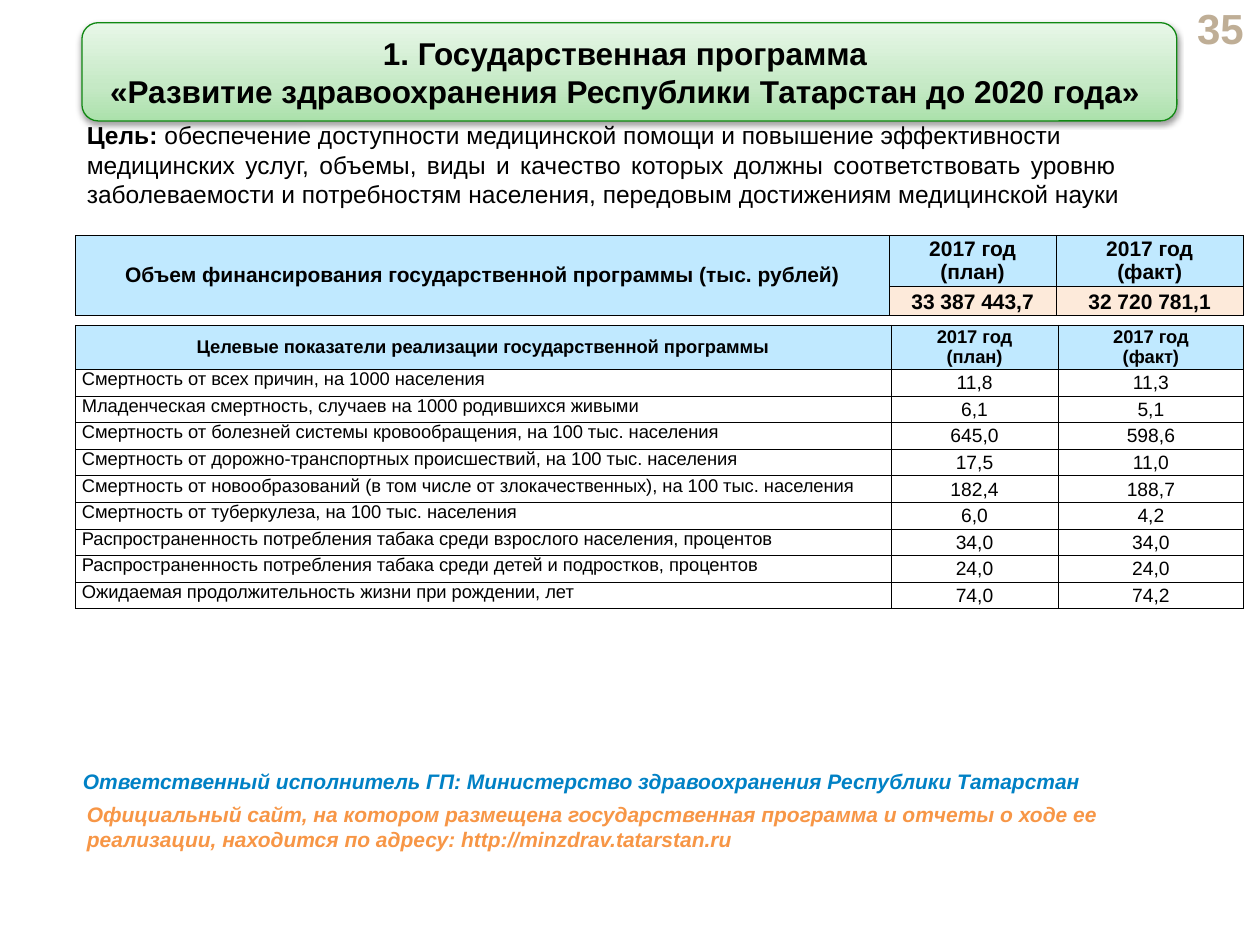
import copy

import pptx
import pptx.util
import pptx.dml.color
import pptx.enum.shapes
import pptx.enum.text
import pptx.oxml
import pptx.oxml.ns
from pptx.util import Inches

COLORS = {
    "text": "000000",
    "number": "BFAE96",
    "header": "C0E9FF",
    "amount": "FDEADA",
    "white": "FFFFFF",
    "title_line": "108812",
    "owner": "0081C5",
    "site": "F79646",
}
TITLE_STOPS = [(0, "ABE1AB"), (0.35, "C5E9C5"), (1, "E8F7E8")]
ALIGN = pptx.enum.text.PP_ALIGN
ANCHOR = pptx.enum.text.MSO_ANCHOR

YEARS = ["2017 год\n(план)", "2017 год\n(факт)"]
AMOUNTS = ["33 387 443,7", "32 720 781,1"]
INDICATORS = [
    ("Смертность от всех причин, на 1000 населения", "11,8", "11,3"),
    ("Младенческая смертность, случаев на 1000 родившихся живыми", "6,1", "5,1"),
    ("Смертность от болезней системы кровообращения, на 100 тыс. населения", "645,0", "598,6"),
    ("Смертность от дорожно-транспортных происшествий, на 100 тыс. населения", "17,5", "11,0"),
    ("Смертность от новообразований (в том числе от злокачественных), на 100 тыс. населения",
     "182,4", "188,7"),
    ("Смертность от туберкулеза, на 100 тыс. населения", "6,0", "4,2"),
    ("Распространенность потребления табака среди взрослого населения, процентов", "34,0", "34,0"),
    ("Распространенность потребления табака среди детей и подростков, процентов", "24,0", "24,0"),
    ("Ожидаемая продолжительность жизни при рождении, лет", "74,0", "74,2"),
]


def rgb(name):
    return pptx.dml.color.RGBColor.from_string(COLORS.get(name, name))


def add_run(p, text, size=12, color="text", bold=False, italic=False):
    r = p.add_run()
    r.text = text
    f = r.font
    f.name, f.size, f.bold, f.italic = "Arial", pptx.util.Pt(size), bold, italic
    f.color.rgb = rgb(color)


def write(tf, text, align=ALIGN.LEFT, spacing=None, **fmt):
    for i, line in enumerate(text.split("\n")):
        p = tf.add_paragraph() if i else tf.paragraphs[0]
        p.alignment = align
        if spacing:
            p.line_spacing = spacing
        for j, part in enumerate(line.split("\v")):
            if j:
                p.add_line_break()
            add_run(p, part, **fmt)


def add_text(s, box, text="", anchor=ANCHOR.TOP, **fmt):
    tf = s.shapes.add_textbox(*map(Inches, box)).text_frame
    tf.word_wrap = True
    tf.vertical_anchor = anchor
    if text:
        write(tf, text, **fmt)
    return tf


def set_borders(cell):
    tcPr = cell._tc.get_or_add_tcPr()
    for i, side in enumerate("LRTB"):
        tcPr.insert(i, pptx.oxml.parse_xml(
            f'<a:ln{side} {pptx.oxml.ns.nsdecls("a")} w="3175"><a:solidFill>'
            f'<a:srgbClr val="{COLORS["text"]}"/></a:solidFill></a:ln{side}>'))


def fill_cell(cell, text, fill, inset=0.05, anchor=ANCHOR.MIDDLE, **fmt):
    cell.fill.solid()
    cell.fill.fore_color.rgb = rgb(fill)
    cell.margin_left = cell.margin_right = Inches(inset)
    cell.margin_top = cell.margin_bottom = 0
    cell.vertical_anchor = anchor
    write(cell.text_frame, text, **fmt)


def add_grid(s, box, widths, heights):
    table = s.shapes.add_table(len(heights), len(widths), *map(Inches, box)).table
    table.first_row = table.horz_banding = False
    for col, w in zip(table.columns, widths):
        col.width = Inches(w)
    for row, h in zip(table.rows, heights):
        row.height = Inches(h)
    for cell in table.iter_cells():
        set_borders(cell)
    return table


def add_funding(s, box):
    table = add_grid(s, box, [6.46, 1.32, 1.49], [0.39, 0.19])
    table.cell(0, 0).merge(table.cell(1, 0))
    head = dict(fill="header", inset=0.06, align=ALIGN.CENTER, bold=True)
    fill_cell(table.cell(0, 0),
              "Объем финансирования государственной программы (тыс. рублей)", **head)
    for c, (year, amount) in enumerate(zip(YEARS, AMOUNTS), 1):
        fill_cell(table.cell(0, c), year, **head)
        fill_cell(table.cell(1, c), amount, "amount", inset=0.07,
                  align=ALIGN.CENTER, spacing=1.15, bold=True)


def add_indicators(s, box):
    table = add_grid(s, box, [6.47, 1.33, 1.47], [0.3] + [0.19] * len(INDICATORS))
    heads = ["Целевые показатели реализации государственной программы"] + YEARS
    for c, text in enumerate(heads):
        fill_cell(table.cell(0, c), text, "header", align=ALIGN.CENTER, size=10.5, bold=True)
    for i, (name, *values) in enumerate(INDICATORS, 1):
        fill_cell(table.cell(i, 0), name, "white", anchor=ANCHOR.TOP, size=10.5)
        for c, value in enumerate(values, 1):
            fill_cell(table.cell(i, c), value, "white", inset=0.07, anchor=ANCHOR.TOP,
                      align=ALIGN.CENTER, spacing=1.15, size=11)


def add_goal(s, box):
    tf = add_text(s, box, anchor=ANCHOR.MIDDLE)
    p = tf.paragraphs[0]
    p.alignment = ALIGN.JUSTIFY
    add_run(p, "Цель:", size=14, bold=True)
    add_run(p, " обеспечение доступности медицинской помощи и повышение эффективности ", size=14)
    p = tf.add_paragraph()
    p.alignment = ALIGN.JUSTIFY
    add_run(p, "медицинских услуг, объемы, виды и качество которых должны соответствовать уровню ",
            size=14)
    p.add_line_break()
    add_run(p, "заболеваемости и потребностям населения, передовым достижениям медицинской науки",
            size=14)


def add_title(s, box):
    sp = s.shapes.add_shape(pptx.enum.shapes.MSO_SHAPE.ROUNDED_RECTANGLE, *map(Inches, box))
    sp.fill.gradient()
    sp.fill.gradient_angle = 90
    gsLst = sp._element.spPr.find(".//" + pptx.oxml.ns.qn("a:gsLst"))
    gsLst.append(copy.deepcopy(gsLst[-1]))
    for stop, (position, color) in zip(sp.fill.gradient_stops, TITLE_STOPS):
        stop.position = position
        stop.color.rgb = rgb(color)
    sp.line.color.rgb = rgb("title_line")
    sp.line.width = pptx.util.Pt(0.75)
    sp.shadow.inherit = False
    sp._element.spPr.find(pptx.oxml.ns.qn("a:effectLst")).append(pptx.oxml.parse_xml(
        f'<a:outerShdw {pptx.oxml.ns.nsdecls("a")} blurRad="40000" dist="20000" dir="5400000" '
        f'rotWithShape="0"><a:srgbClr val="{COLORS["text"]}"><a:alpha val="38000"/>'
        '</a:srgbClr></a:outerShdw>'))
    tf = sp.text_frame
    tf.word_wrap = True
    tf.vertical_anchor = ANCHOR.MIDDLE
    write(tf, "1. Государственная программа \v"
              "«Развитие здравоохранения Республики Татарстан до 2020 года» ",
          align=ALIGN.CENTER, size=18, bold=True)


def main():
    prs = pptx.Presentation()
    prs.slide_width, prs.slide_height = Inches(10), Inches(7.5)
    s = prs.slides.add_slide(prs.slide_layouts[6])
    add_text(s, (9.23, 0.05, 0.74, 0.34), "35", anchor=ANCHOR.MIDDLE,
             align=ALIGN.RIGHT, size=24, color="number", bold=True)
    add_funding(s, (0.6, 1.87, 9.27, 0.58))
    add_indicators(s, (0.6, 2.58, 9.27, 2.01))
    add_goal(s, (0.59, 0.9, 8.45, 0.81))
    add_title(s, (0.65, 0.18, 8.69, 0.78))
    add_text(s, (0.56, 6.05, 9.33, 0.3),
             "Ответственный исполнитель ГП: Министерство здравоохранения Республики Татарстан",
             color="owner", bold=True, italic=True)
    add_text(s, (0.59, 6.31, 8.75, 0.5),
             "Официальный сайт, на котором размещена государственная программа и отчеты о ходе ее "
             "реализации, находится по адресу: http://minzdrav.tatarstan.ru",
             color="site", bold=True, italic=True)
    prs.save("out.pptx")


if __name__ == "__main__":
    main()
